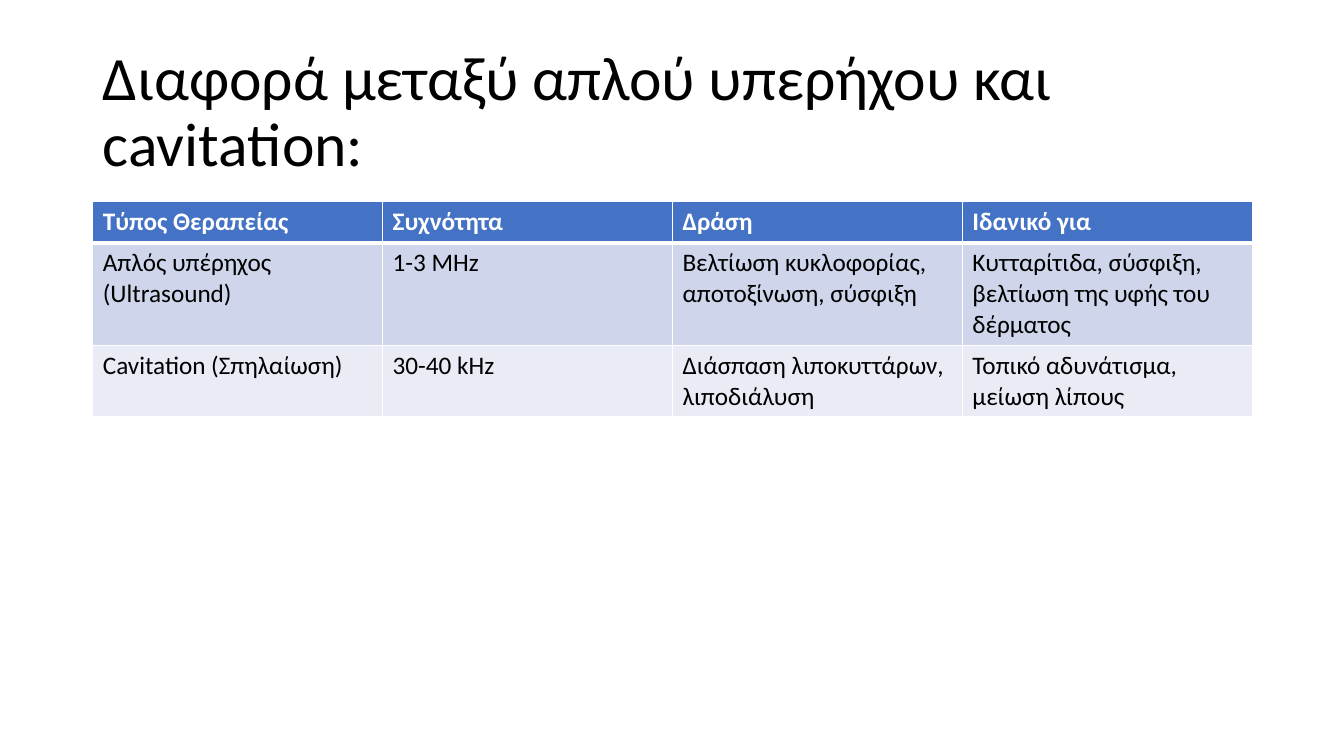
from dataclasses import dataclass

from lxml import etree
from pptx import Presentation
from pptx.dml.color import RGBColor
from pptx.enum.text import MSO_ANCHOR, MSO_AUTO_SIZE, PP_ALIGN
from pptx.oxml.ns import qn
from pptx.util import Inches, Pt

LEFT = PP_ALIGN.LEFT
TOP = MSO_ANCHOR.TOP
MIDDLE = MSO_ANCHOR.MIDDLE
NO_AUTOFIT = MSO_AUTO_SIZE.NONE
TITLE_ONLY_LAYOUT = 5


@dataclass(frozen=True)
class Theme:
    font: str = "Calibri"
    title_size: int = 44
    table_size: int = 18
    text: str = "000000"
    white: str = "FFFFFF"
    header_fill: str = "4472C4"
    row_fills: tuple = ("CFD5EA", "E9EBF5")
    border: int = 1
    header_border: int = 3


TITLE = "Διαφορά μεταξύ απλού υπερήχου και cavitation:"
THERAPIES = [
    ["Τύπος Θεραπείας", "Συχνότητα", "Δράση", "Ιδανικό για"],
    ["Απλός υπέρηχος (Ultrasound)", "1-3 MHz",
     "Βελτίωση κυκλοφορίας, αποτοξίνωση, σύσφιξη",
     "Κυτταρίτιδα, σύσφιξη, βελτίωση της υφής του δέρματος"],
    ["Cavitation (Σπηλαίωση)", "30-40 kHz",
     "Διάσπαση λιποκυττάρων, λιποδιάλυση",
     "Τοπικό αδυνάτισμα, μείωση λίπους"],
]


def write_text(text_frame, text, *, font, size, color, bold=False, line_spacing=None):
    text_frame.word_wrap = True
    paragraph = text_frame.paragraphs[0]
    paragraph.alignment = LEFT
    if line_spacing:
        paragraph.line_spacing = line_spacing
    run = paragraph.add_run()
    run.text = text
    run.font.name = font
    run.font.size = Pt(size)
    run.font.bold = bold
    run.font.color.rgb = RGBColor.from_string(color)


class SlideBuilder:
    def __init__(self, slide, theme):
        self.slide = slide
        self.theme = theme

    def add_title(self, text, left, top, width, height):
        title = self.slide.shapes.title
        title.left, title.top = Inches(left), Inches(top)
        title.width, title.height = Inches(width), Inches(height)
        title.text_frame.auto_size = NO_AUTOFIT
        title.text_frame.vertical_anchor = MIDDLE
        write_text(title.text_frame, text, font=self.theme.font,
                   size=self.theme.title_size, color=self.theme.text, line_spacing=0.9)

    def set_borders(self, cell, **widths):
        properties = cell._tc.get_or_add_tcPr()
        for side, width in widths.items():
            line = etree.SubElement(properties, qn(f"a:ln{side}"), w=str(Pt(width)))
            fill = etree.SubElement(line, qn("a:solidFill"))
            etree.SubElement(fill, qn("a:srgbClr"), val=self.theme.white)

    def add_table(self, rows, left, top, width, height, row_height):
        theme = self.theme
        shape = self.slide.shapes.add_table(
            len(rows), len(rows[0]),
            Inches(left), Inches(top), Inches(width), Inches(height))
        table = shape.table
        for row_index, texts in enumerate(rows):
            table.rows[row_index].height = Inches(row_height)
            is_header = row_index == 0
            fill = theme.header_fill if is_header else theme.row_fills[(row_index - 1) % 2]
            top_border = theme.header_border if row_index == 1 else theme.border
            bottom_border = theme.header_border if is_header else theme.border
            for column_index, text in enumerate(texts):
                cell = table.cell(row_index, column_index)
                self.set_borders(cell, L=theme.border, R=theme.border,
                                 T=top_border, B=bottom_border)
                cell.fill.solid()
                cell.fill.fore_color.rgb = RGBColor.from_string(fill)
                cell.vertical_anchor = TOP
                write_text(cell.text_frame, text, font=theme.font, size=theme.table_size,
                           color=theme.white if is_header else theme.text, bold=is_header)
        # Rows grow with their wrapped text, so the frame keeps the full height
        shape.height = Inches(height)


def main():
    presentation = Presentation()
    presentation.slide_width = Inches(13.33)
    presentation.slide_height = Inches(7.5)
    layout = presentation.slide_layouts[TITLE_ONLY_LAYOUT]
    builder = SlideBuilder(presentation.slides.add_slide(layout), Theme())

    # Title
    builder.add_title(TITLE, 0.92, 0.4, 11.5, 1.45)

    # Comparison table
    builder.add_table(THERAPIES, 0.92, 2, 11.5, 2.11, row_height=0.41)

    presentation.save("out.pptx")


if __name__ == "__main__":
    main()
